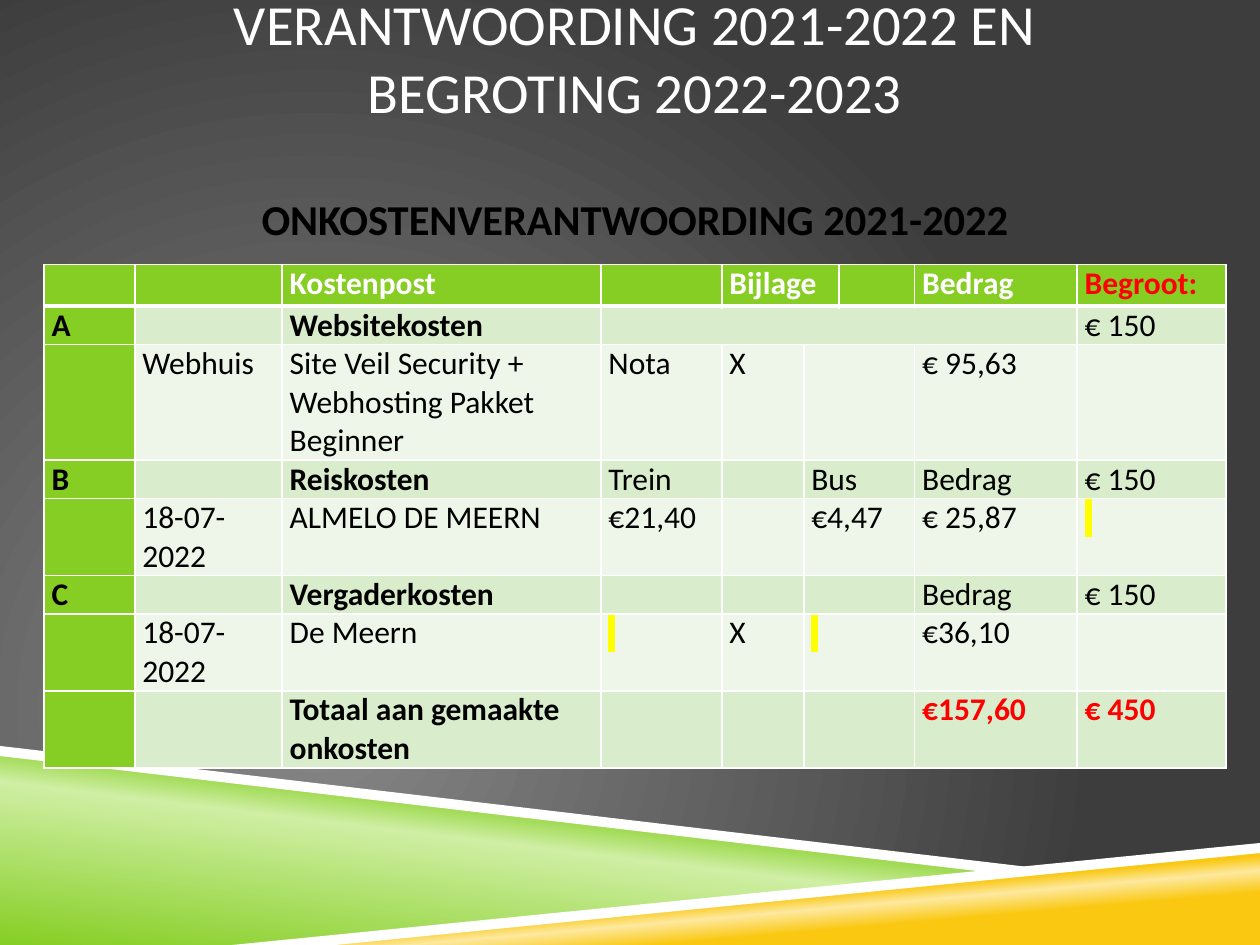
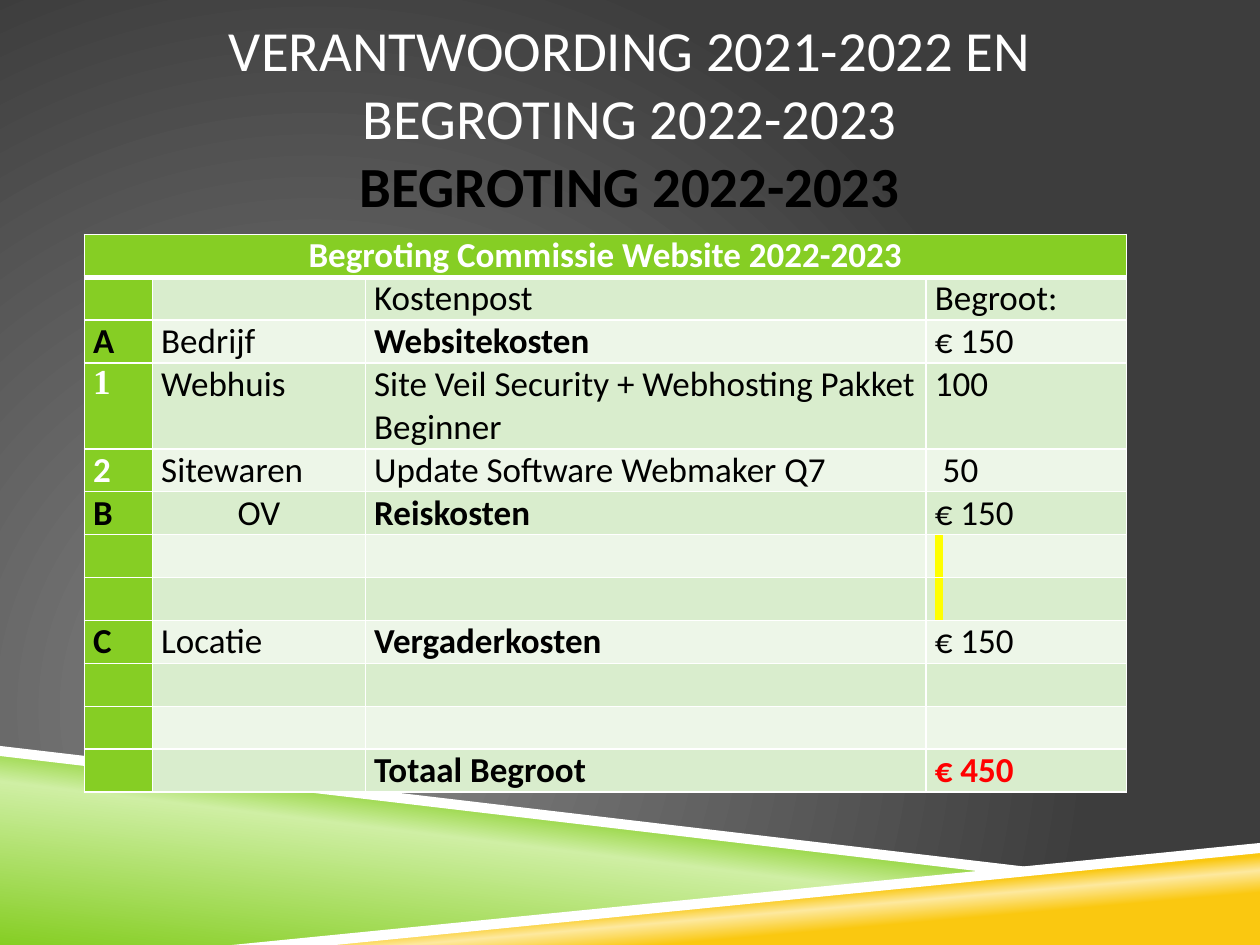
from dataclasses import dataclass

from lxml.etree import SubElement
from pptx import Presentation
from pptx.dml.color import RGBColor
from pptx.enum.text import MSO_ANCHOR, MSO_AUTO_SIZE, PP_ALIGN
from pptx.oxml import parse_xml
from pptx.oxml.ns import nsdecls, qn
from pptx.util import Emu, Pt

PX = 9144


@dataclass(frozen=True)
class Theme:
    """Colours, fonts and type sizes of the deck."""
    white: str = "FFFFFF"
    black: str = "000000"
    red: str = "FF0000"
    yellow: str = "FFFF00"
    green: str = "86CE24"
    row_dark: str = "D9EDCD"
    row_light: str = "EDF6E8"
    backdrop: tuple = ((0, "878787"), (100, "3D3D3D"))
    green_band: tuple = ((0, "86CE24"), (52, "CFEFA4"), (66, "86CE24"))
    gold_band: tuple = ((28, "FAC810"), (40, "FDE99F"), (48, "FAC810"))
    font: str = "Calibri"
    serif: str = "Times New Roman"
    title: float = 32.4
    subtitle: float = 24.3


T = Theme()

MARKS = {
    "*": (T.black, True, T.font),
    "!": (T.red, True, T.font),
    "#": (T.white, True, T.font),
    "=": (T.white, True, T.font),
    "@": (T.white, True, T.serif),
    "^": (T.black, False, T.font),
    "~": (T.black, False, T.font),
}

BANDS = [
    ([(0, 597), (792, 692), (200, 750), (0, 750)], T.green_band, 277),
    ([(198, 750), (1000, 672), (1000, 750)], T.gold_band, 265),
    ([(0, 592), (0, 600), (790, 693), (832, 690)], T.white, None),
    ([(1000, 669), (184, 750), (266, 750), (1000, 677)], T.white, None),
]

COSTS = [
    ["", "", "#Kostenpost", "", "#Bijlage", "", "", "#Bedrag", "!Begroot:"],
    ["*A", "", "*Websitekosten", "", "", "", "", "", "€ 150"],
    ["", "Webhuis", "Site Veil Security + Webhosting Pakket Beginner",
     "Nota", "X", "", "", "€ 95,63", ""],
    ["*B", "", "*Reiskosten", "Trein", "", "Bus", "", "Bedrag", "€ 150"],
    ["", "18-07-2022", "ALMELO DE MEERN", "€21,40", "", "€4,47", "", "€ 25,87", "~ "],
    ["*C", "", "*Vergaderkosten", "", "", "", "", "Bedrag", "€ 150"],
    ["", "18-07-2022", "De Meern", "~ ", "X", "~ ", "", "€36,10", ""],
    ["", "", "*Totaal aan gemaakte onkosten", "", "", "", "", "!€157,60", "!€ 450"],
]
COST_SPANS = [(0, 4, 5), (1, 3, 7)] + [(row, 5, 6) for row in range(2, 8)]

BUDGET = [
    ["=Begroting Commissie Website 2022-2023", "", "", ""],
    ["", "", "Kostenpost", "Begroot:"],
    ["*A", "Bedrijf", "*Websitekosten", "€ 150"],
    ["@1", "Webhuis", "Site Veil Security + Webhosting Pakket Beginner", "100"],
    ["#2", "Sitewaren", "Update Software Webmaker Q7", " 50"],
    ["*B", "^OV", "*Reiskosten", "€ 150"],
    ["", "", "", "~ "],
    ["", "", "", "~ "],
    ["*C", "Locatie", "*Vergaderkosten", "€ 150"],
    ["", "", "", ""],
    ["", "", "", ""],
    ["", "", "*Totaal Begroot", "!€ 450"],
]


class Deck:
    """Holds the theme, the presentation and the current slide."""

    def __init__(self, theme):
        """Start a deck with the shared backdrop on its master."""
        self.t = theme
        self.prs = Presentation()
        self.prs.slide_width, self.prs.slide_height = Emu(1000 * PX), Emu(750 * PX)
        self.s = None
        master = self.prs.slide_master
        master.background.fill.background()
        self.gradient(master.element, theme.backdrop,
                      '<a:path path="circle"><a:fillToRect l="50000" t="100000" '
                      'r="100000" b="50000"/></a:path>')

    def slide(self):
        """Add a title-only slide, with the bands on the master the first time."""
        first = self.s is None
        self.s = self.prs.slides.add_slide(self.prs.slide_layouts[5])
        if first:
            tree = self.prs.slide_master.shapes.element
            for index, band in enumerate(BANDS):
                tree.insert(2 + index, self.band(*band).element)

    def gradient(self, element, stops, direction):
        """Put a gradient in the place of the first empty fill."""
        gs = "".join(f'<a:gs pos="{pos * 1000}"><a:srgbClr val="{colour}"/></a:gs>'
                     for pos, colour in stops)
        empty = next(element.iter(qn("a:noFill")))
        empty.getparent().replace(empty, parse_xml(
            f'<a:gradFill {nsdecls("a")} rotWithShape="1"><a:gsLst>{gs}</a:gsLst>'
            f'{direction}</a:gradFill>'))

    def band(self, points, fill, angle):
        """Draw a closed polygon with a plain or gradient fill."""
        builder = self.s.shapes.build_freeform(*points[0], scale=PX)
        builder.add_line_segments(points[1:], close=True)
        sp = builder.convert_to_shape()
        sp.shadow.inherit = False
        sp.line.fill.background()
        if angle is None:
            sp.fill.solid()
            sp.fill.fore_color.rgb = RGBColor.from_string(fill)
        else:
            sp.fill.background()
            self.gradient(sp.element, fill, f'<a:lin ang="{angle * 60000}" scaled="0"/>')
        return sp

    def format(self, p, size, colour, bold, font):
        """Format every run of a paragraph."""
        for r in p.runs:
            r.font.size, r.font.bold, r.font.name = Pt(size), bold, font
            r.font.color.rgb = RGBColor.from_string(colour)

    def title(self, left, subtitle, size, gap):
        """Fill the title with the shared heading and a black subtitle."""
        sp = self.s.shapes.title
        sp.left, sp.top, sp.width, sp.height = (
            Emu(v * PX) for v in (left, 30, 850, 125))
        tf = sp.text_frame
        tf.word_wrap, tf.auto_size = True, MSO_AUTO_SIZE.NONE
        tf.vertical_anchor = MSO_ANCHOR.MIDDLE
        tf.margin_left = tf.margin_right = 0
        tf.margin_top = tf.margin_bottom = Emu(5 * PX)
        tf.text = f"VERANTWOORDING 2021-2022 EN BEGROTING 2022-2023\n{subtitle}"
        head, sub = tf.paragraphs
        head.alignment = sub.alignment = PP_ALIGN.CENTER
        sub.space_before = Pt(gap)
        self.format(head, self.t.title, self.t.white, False, self.t.font)
        self.format(sub, size, self.t.black, True, self.t.font)

    def borders(self, cell, row):
        """Give a cell white borders, thick below the header row."""
        tc_pr = cell._tc.get_or_add_tcPr()
        for side in "LRTB":
            thick = (row, side) in ((0, "B"), (1, "T"))
            ln = SubElement(tc_pr, qn(f"a:ln{side}"), w=str(Pt(3 if thick else 1)))
            fill = SubElement(ln, qn("a:solidFill"))
            SubElement(fill, qn("a:srgbClr"), val=self.t.white)

    def highlight(self, r):
        """Mark a run in yellow."""
        mark = parse_xml(f'<a:highlight {nsdecls("a")}>'
                         f'<a:srgbClr val="{self.t.yellow}"/></a:highlight>')
        r.font._element.find(qn("a:solidFill")).addnext(mark)

    def cell(self, cell, text, row, col, size, margin):
        """Fill and format one table cell."""
        self.borders(cell, row)
        body = self.t.row_dark if row % 2 else self.t.row_light
        cell.fill.solid()
        cell.fill.fore_color.rgb = RGBColor.from_string(
            self.t.green if row == 0 or col == 0 else body)
        cell.margin_left = cell.margin_right = Emu(margin * PX)
        cell.margin_top = cell.margin_bottom = 0
        p = cell.text_frame.paragraphs[0]
        p.font.size = Pt(size)
        if not text:
            return
        mark = text[0] if text[0] in MARKS else ""
        p.text = text[len(mark):]
        self.format(p, size, *MARKS.get(mark, MARKS["^"]))
        if mark and mark in "=^":
            p.alignment = PP_ALIGN.CENTER
        if mark == "~":
            self.highlight(p.runs[0])

    def table(self, left, top, widths, heights, rows, spans, size, margin):
        """Add a banded table with a green header row and first column."""
        frame = self.s.shapes.add_table(
            len(rows), len(widths), Emu(left * PX), Emu(top * PX),
            Emu(sum(widths) * PX), Emu(sum(heights) * PX))
        table = frame.table
        table.first_row = table.horz_banding = False
        for column, width in zip(table.columns, widths):
            column.width = Emu(width * PX)
        for line, height in zip(table.rows, heights):
            line.height = Emu(height * PX)
        for row, texts in enumerate(rows):
            for col, text in enumerate(texts):
                self.cell(table.cell(row, col), text, row, col, size, margin)
        for row, start, end in spans:
            table.cell(row, start).merge(table.cell(row, end))


def main():
    """Build both slides and save them."""
    deck = Deck(T)

    deck.slide()
    deck.title(79, "ONKOSTENVERANTWOORDING 2021-2022", T.subtitle, 39)
    deck.table(35, 210, [72, 117, 253, 96, 65, 28, 60, 129, 118],
               [33] + [30 * lines for lines in (1, 3, 1, 2, 1, 2, 2)],
               COSTS, COST_SPANS, 18, 6)

    deck.slide()
    deck.title(75, "BEGROTING 2022-2023", T.title, 0)
    deck.table(67, 186, [54, 169, 445, 159],
               [68 if row == 3 else 34 for row in range(len(BUDGET))],
               BUDGET, [(0, 0, 3)], 20, 7)

    deck.prs.save("out.pptx")


if __name__ == "__main__":
    main()
